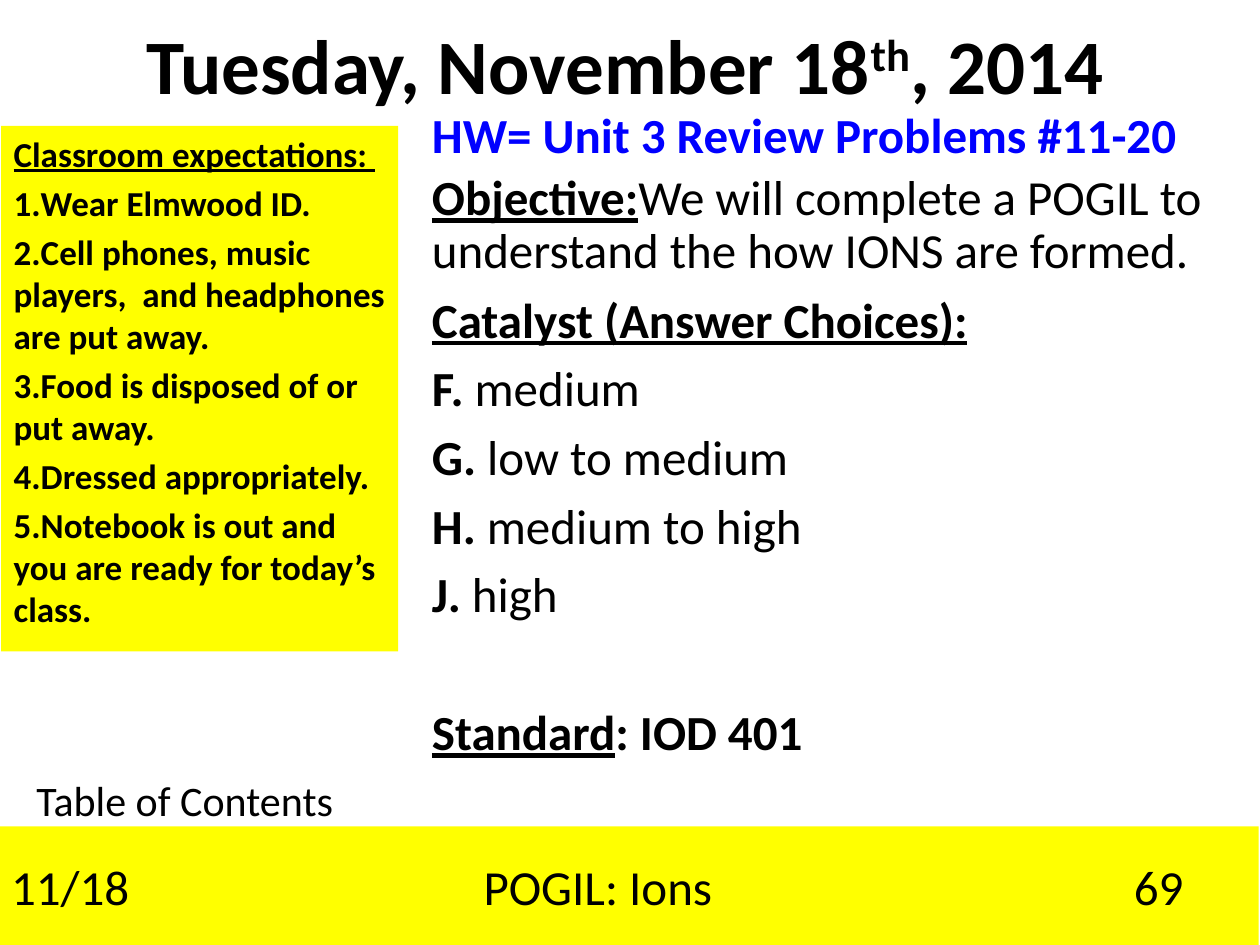
from lxml import etree
from pptx import Presentation
from pptx.dml.color import RGBColor
from pptx.enum import shapes, text
from pptx.oxml.ns import qn
from pptx.util import Inches, Pt

BLACK = RGBColor(0, 0, 0)
BLUE = RGBColor(0, 0, 255)
YELLOW = RGBColor(255, 255, 0)
BOLD = {"bold": True}
HEAD = {"bold": True, "underline": True}
HOME = {"bold": True, "color": BLUE}
RAISED = {"bold": True, "base": 30000}

TITLE = [([("Tuesday, November 18", BOLD), ("th", RAISED), (", 2014", BOLD)],
          {"align": text.PP_ALIGN.CENTER})]
TIGHT = {"line": 0.9, "before": 5.6}
LOOSE = {"before": 5.6}
CHOICES = [("F. ", "medium"), ("G. ", "low to medium"),
           ("H. ", "medium to high"), ("J. ", "high")]
LESSON = [
    ([("HW= Unit 3 Review Problems #11-20", HOME)], TIGHT),
    ([("Objective:", HEAD),
      ("We will complete a POGIL to understand the how IONS are formed.", {})],
     TIGHT),
    ([("Catalyst (Answer Choices):", HEAD)], LOOSE),
    *[([(key, BOLD), (word, {})], LOOSE) for key, word in CHOICES],
    ([("Standard", HEAD), (": IOD 401", BOLD)], {"before": 45}),
]
RULES = [
    "Wear Elmwood ID.",
    "Cell phones, music players,  and headphones are put away.",
    "Food is disposed of or put away.",
    "Dressed appropriately.",
    "Notebook is out and you are ready for today’s class.",
]
RULE_LIST = [([("Classroom expectations: ", HEAD)], {"before": 4})] + [
    ([(rule, BOLD)], {"before": 4, "number": True}) for rule in RULES]
ENTRY = [([("11/18\tPOGIL: Ions\t69", {})], {"tabs": (3.75, 8.91)})]
LABEL = [([("Table of Contents", {})], {})]


def set_para(para, look):
    para.alignment = look.get("align", text.PP_ALIGN.LEFT)
    para.line_spacing = look.get("line", 1.0)
    para.space_before = Pt(look.get("before", 0))
    props = para._p.get_or_add_pPr()
    if look.get("number"):
        props.set("marL", "0")
        props.set("indent", "0")
        etree.SubElement(props, qn("a:buFont"), typeface="+mj-lt")
        etree.SubElement(props, qn("a:buAutoNum"), type="arabicPeriod")
    if "tabs" in look:
        stops = etree.SubElement(props, qn("a:tabLst"))
        for pos in look["tabs"]:
            etree.SubElement(stops, qn("a:tab"), pos=str(Inches(pos)), algn="l")


def write(shape, paras, size, anchor):
    frame = shape.text_frame
    for name, value in {"word_wrap": True, "vertical_anchor": anchor,
                        "auto_size": text.MSO_AUTO_SIZE.NONE}.items():
        setattr(frame, name, value)
    for i, (runs, look) in enumerate(paras):
        para = frame.add_paragraph() if i else frame.paragraphs[0]
        set_para(para, look)
        for words, style in runs:
            run = para.add_run()
            run.text = words
            form = {"name": "Calibri", "size": Pt(size),
                    "bold": style.get("bold", False),
                    "underline": style.get("underline", False)}
            for name, value in form.items():
                setattr(run.font, name, value)
            run.font.color.rgb = style.get("color", BLACK)
            if "base" in style:
                run._r.get_or_add_rPr().set("baseline", str(style["base"]))


def place(shape, box):
    for name, value in zip(("left", "top", "width", "height"), box):
        setattr(shape, name, Inches(value))


def add_panel(slide, box):
    panel = slide.shapes.add_shape(shapes.MSO_SHAPE.RECTANGLE, *map(Inches, box))
    panel.shadow.inherit = False
    panel.fill.solid()
    panel.fill.fore_color.rgb = YELLOW
    panel.line.fill.background()
    return panel


def add_box(slide, box):
    return slide.shapes.add_textbox(*map(Inches, box))


def main():
    deck = Presentation()
    deck.slide_width, deck.slide_height = Inches(10), Inches(7.5)
    slide = deck.slides.add_slide(deck.slide_layouts[5])
    top, mid, low = (text.MSO_ANCHOR.TOP, text.MSO_ANCHOR.MIDDLE,
                     text.MSO_ANCHOR.BOTTOM)

    title = slide.shapes.title
    place(title, (0.5, 0, 8.92, 0.92))
    write(title, TITLE, 44, low)

    parts = [
        (add_box, (3.33, 0.83, 6.67, 6.32), LESSON, 28, top),
        (add_panel, (0.01, 1, 3.15, 4.17), RULE_LIST, 20, top),
        (add_panel, (-0.01, 6.56, 10, 0.94), ENTRY, 28, mid),
        (add_box, (0.19, 6.1, 3.25, 0.5), LABEL, 24, top),
    ]
    for add, box, paras, size, anchor in parts:
        write(add(slide, box), paras, size, anchor)
    deck.save("out.pptx")


if __name__ == "__main__":
    main()
